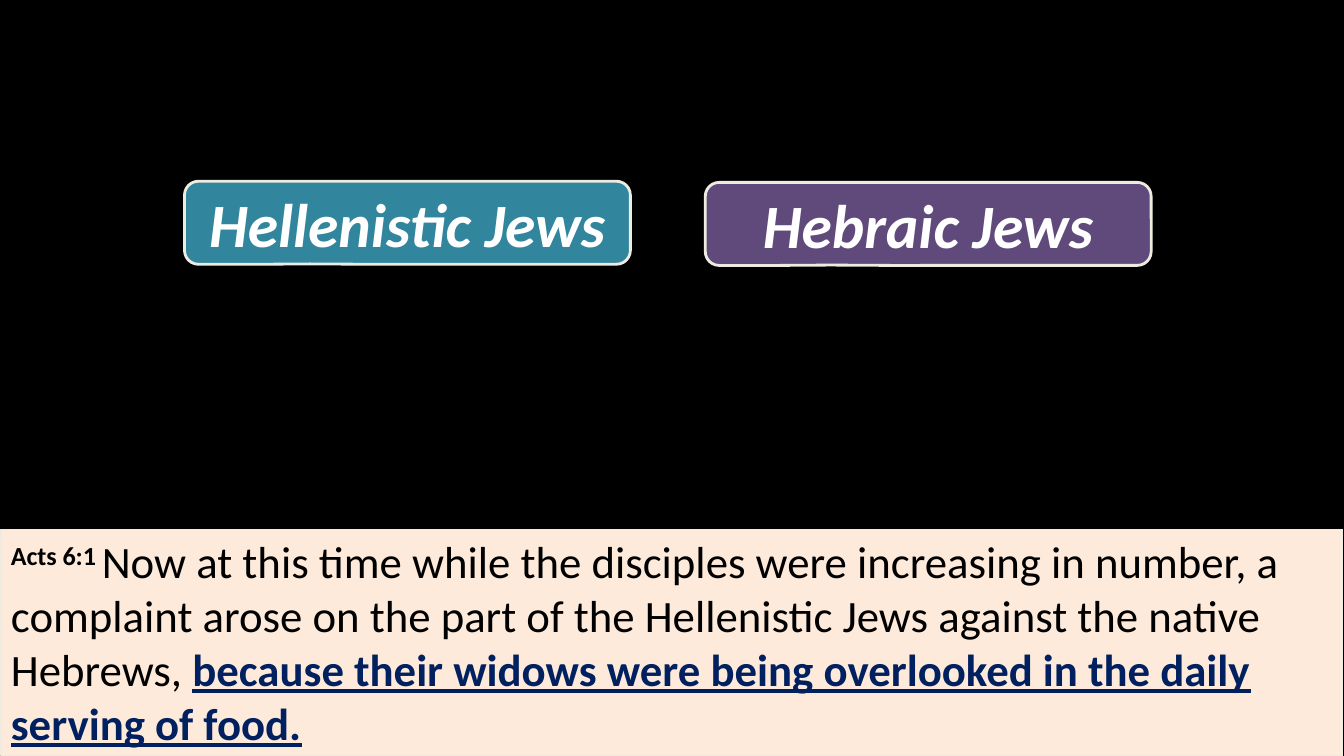
from pptx import Presentation
from pptx.dml.color import RGBColor
from pptx.enum import shapes, text
from pptx.util import Pt

COLORS = {
    "background": "000000",
    "hellenistic": "31859C",
    "hebraic": "604A7B",
    "border": "EEECE1",
    "label": "FFFFFF",
    "passage": "FDEADA",
    "verse": "000000",
    "emphasis": "002060",
}
FONT = "Calibri"
WIDTH, HEIGHT = 960, 540


def color(name):
    return RGBColor.from_string(COLORS[name])


def add_panel(slide, kind, box, fill, border_width):
    panel = slide.shapes.add_shape(kind, *(Pt(length) for length in box))
    panel.shadow.inherit = False
    panel.fill.solid()
    panel.fill.fore_color.rgb = color(fill)
    panel.line.color.rgb = color("border")
    panel.line.width = Pt(border_width)
    panel.text_frame.word_wrap = True
    return panel


def style_run(run, size, ink, bold=False, italic=False, underline=False):
    font = run.font
    font.name, font.size = FONT, Pt(size)
    font.bold, font.italic, font.underline = bold, italic, underline
    font.color.rgb = color(ink)


def add_group_label(slide, box, name, fill):
    label = add_panel(
        slide, shapes.MSO_SHAPE.ROUNDED_RECTANGULAR_CALLOUT, box, fill, 2)
    for index, value in enumerate((-0.219, 0.496, 0.167)):
        label.adjustments[index] = value
    frame = label.text_frame
    frame.text = name
    frame.vertical_anchor = text.MSO_ANCHOR.MIDDLE
    paragraph = frame.paragraphs[0]
    paragraph.alignment = text.PP_ALIGN.CENTER
    style_run(paragraph.runs[0], 44, "label", bold=True, italic=True)


def add_passage(slide, box, reference, opening, emphasis):
    """Scripture panel: raised reference, plain opening, underlined ending."""
    panel = add_panel(slide, shapes.MSO_SHAPE.RECTANGLE, box, "passage", 0.75)
    panel.text_frame.vertical_anchor = text.MSO_ANCHOR.TOP
    paragraph = panel.text_frame.paragraphs[0]
    paragraph.alignment = text.PP_ALIGN.LEFT
    for words in (reference, opening, emphasis):
        paragraph.add_run().text = words
    reference_run, opening_run, emphasis_run = paragraph.runs
    style_run(reference_run, 32, "verse", bold=True)
    reference_run.font._element.set("baseline", "30000")
    style_run(opening_run, 32, "verse")
    style_run(emphasis_run, 32, "emphasis", bold=True, underline=True)


def main():
    deck = Presentation()
    deck.slide_width, deck.slide_height = Pt(WIDTH), Pt(HEIGHT)
    slide = deck.slides.add_slide(deck.slide_layouts[6])
    slide.background.fill.solid()
    slide.background.fill.fore_color.rgb = color("background")

    add_group_label(slide, (131.8, 129.5, 318.5, 59.3),
                    "Hellenistic Jews", "hellenistic")
    add_group_label(slide, (503.8, 130.3, 318.5, 59.3),
                    "Hebraic Jews", "hebraic")
    add_passage(
        slide, (0.7, 378, 958.6, 162),
        "Acts 6:1 ",
        "Now at this time while the disciples were increasing in number, "
        "a complaint arose on the part of the Hellenistic Jews against "
        "the native Hebrews, ",
        "because their widows were being overlooked in the daily "
        "serving of food.")
    deck.save("out.pptx")


if __name__ == "__main__":
    main()
